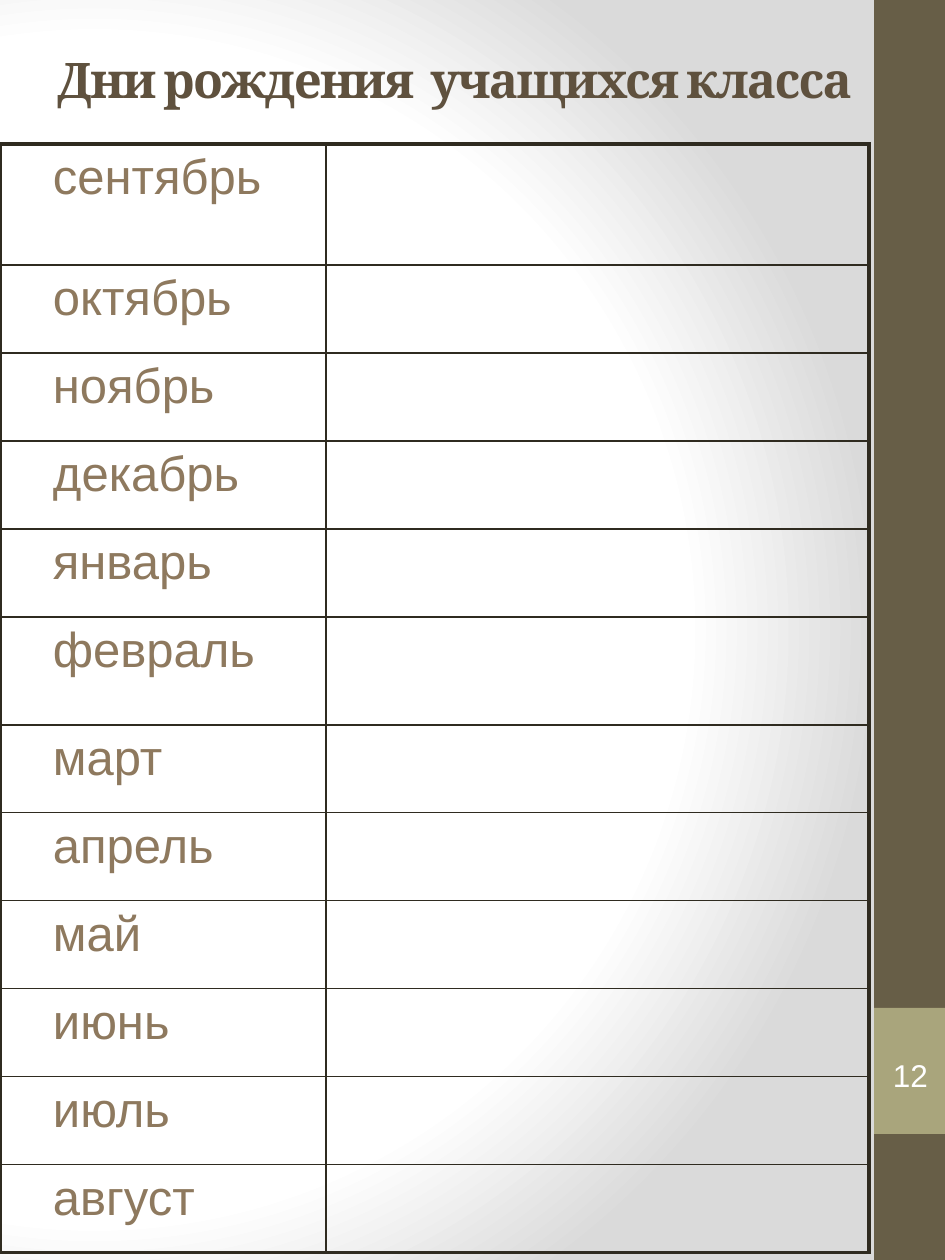
"""Builds a portrait slide with a table for pupils' birthdays by month."""
from dataclasses import dataclass

import pptx
import pptx.dml.color
import pptx.enum.shapes
import pptx.enum.text
import pptx.oxml
import pptx.oxml.ns
import pptx.util

EMU_PER_PX = 914400 / 126
SLIDE_WIDTH, SLIDE_HEIGHT = 945, 1260
COLORS = {
    "white": "FFFFFF",
    "shade": "DADADA",
    "sidebar": "675E47",
    "badge": "A9A57C",
    "title": "5F513E",
    "month": "8E795E",
    "border": "2F2B20",
}
THIN, THICK = 1, 2.25
TABLE_TOP = 144
COLUMN_WIDTHS = (326, 543)
ROW_HEIGHT = 88
TALL_ROWS = {"сентябрь": 121, "февраль": 108}
MONTHS = (
    "сентябрь", "октябрь", "ноябрь", "декабрь", "январь", "февраль",
    "март", "апрель", "май", "июнь", "июль", "август",
)


@dataclass(frozen=True)
class Box:
    left: int
    top: int
    width: int
    height: int

    def emu(self) -> tuple:
        return tuple(px(value) for value in (self.left, self.top, self.width, self.height))


@dataclass(frozen=True)
class Panel:
    box: Box
    color: str


@dataclass(frozen=True)
class TextStyle:
    font: str
    size: int
    color: str
    bold: bool = False


PANELS = (
    Panel(Box(874, 0, 71, SLIDE_HEIGHT), "sidebar"),
    Panel(Box(874, 1008, 71, 126), "badge"),
)
TITLE_STYLE = TextStyle("Cambria", 28, "title", True)
MONTH_STYLE = TextStyle("Arial", 28, "month")
NUMBER_STYLE = TextStyle("Arial", 18, "white")


def px(value: int) -> int:
    return pptx.util.Emu(round(value * EMU_PER_PX))


def rgb(name: str):
    return pptx.dml.color.RGBColor.from_string(COLORS[name])


def add_run(paragraph, text: str, style: TextStyle):
    run = paragraph.add_run()
    run.text = text
    run.font.name = style.font
    run.font.size = pptx.util.Pt(style.size)
    run.font.bold = style.bold
    run.font.color.rgb = rgb(style.color)
    return run


def set_background(slide) -> None:
    fill = slide.background.fill
    fill.solid()
    fill.fore_color.rgb = rgb("white")
    solid = slide.element.find(".//" + pptx.oxml.ns.qn("a:solidFill"))
    stops = "".join(
        f'<a:gs pos="{position * 1000}"><a:srgbClr val="{COLORS[color]}"/></a:gs>'
        for position, color in ((0, "white"), (75, "white"), (100, "shade"))
    )
    gradient = pptx.oxml.parse_xml(
        f'<a:gradFill {pptx.oxml.ns.nsdecls("a")} rotWithShape="1"><a:gsLst>{stops}</a:gsLst>'
        '<a:path path="circle"><a:fillToRect l="20000" t="50000" r="100000" b="50000"/>'
        "</a:path></a:gradFill>"
    )
    solid.getparent().replace(solid, gradient)


def add_panel(slide, panel: Panel) -> None:
    shape = slide.shapes.add_shape(pptx.enum.shapes.MSO_SHAPE.RECTANGLE, *panel.box.emu())
    shape.shadow.inherit = False
    shape.fill.solid()
    shape.fill.fore_color.rgb = rgb(panel.color)
    shape.line.fill.background()


def add_title(slide, text: str) -> None:
    shape = slide.shapes.add_textbox(*Box(45, -115, 851, 387).emu())
    frame = shape.text_frame
    frame.word_wrap = True
    frame.vertical_anchor = pptx.enum.text.MSO_ANCHOR.MIDDLE
    run = add_run(frame.paragraphs[0], text, TITLE_STYLE)
    run.font._element.set("spc", "-100")


def set_borders(cell, widths: dict) -> None:
    properties = cell._tc.get_or_add_tcPr()
    for side, width in widths.items():
        properties.append(pptx.oxml.parse_xml(
            f'<a:ln{side} {pptx.oxml.ns.nsdecls("a")} w="{pptx.util.Pt(width)}">'
            f'<a:solidFill><a:srgbClr val="{COLORS["border"]}"/></a:solidFill></a:ln{side}>'
        ))


def add_month_table(slide) -> None:
    heights = [TALL_ROWS.get(month, ROW_HEIGHT) for month in MONTHS]
    box = Box(0, TABLE_TOP, sum(COLUMN_WIDTHS), sum(heights))
    table = slide.shapes.add_table(len(MONTHS), len(COLUMN_WIDTHS), *box.emu()).table
    table.first_row = False
    table.horz_banding = False
    for column, width in zip(table.columns, COLUMN_WIDTHS):
        column.width = px(width)
    last_row, last_column = len(MONTHS) - 1, len(COLUMN_WIDTHS) - 1
    for row_index, (month, height) in enumerate(zip(MONTHS, heights)):
        table.rows[row_index].height = px(height)
        for column_index in range(len(COLUMN_WIDTHS)):
            cell = table.cell(row_index, column_index)
            set_borders(cell, {
                "L": THICK if column_index == 0 else THIN,
                "R": THICK if column_index == last_column else THIN,
                "T": THICK if row_index == 0 else THIN,
                "B": THICK if row_index == last_row else THIN,
            })
            cell.fill.background()
        month_cell = table.cell(row_index, 0)
        month_cell.margin_left = px(53)
        add_run(month_cell.text_frame.paragraphs[0], month, MONTH_STYLE)


def add_page_number(slide, text: str) -> None:
    shape = slide.shapes.add_shape(
        pptx.enum.shapes.MSO_SHAPE.DOUBLE_BRACKET, *Box(882, 1038, 57, 73).emu()
    )
    shape.adjustments[0] = 0.18
    shape.shadow.inherit = False
    shape.fill.background()
    shape.line.fill.background()
    frame = shape.text_frame
    frame.margin_left = frame.margin_right = frame.margin_top = frame.margin_bottom = 0
    frame.vertical_anchor = pptx.enum.text.MSO_ANCHOR.MIDDLE
    paragraph = frame.paragraphs[0]
    paragraph.alignment = pptx.enum.text.PP_ALIGN.CENTER
    add_run(paragraph, text, NUMBER_STYLE)


def main() -> None:
    presentation = pptx.Presentation()
    presentation.slide_width = px(SLIDE_WIDTH)
    presentation.slide_height = px(SLIDE_HEIGHT)
    slide = presentation.slides.add_slide(presentation.slide_layouts[6])
    set_background(slide)
    for panel in PANELS:
        add_panel(slide, panel)
    add_title(slide, "Дни рождения  учащихся класса")
    add_month_table(slide)
    add_page_number(slide, "12")
    presentation.save("out.pptx")


if __name__ == "__main__":
    main()
